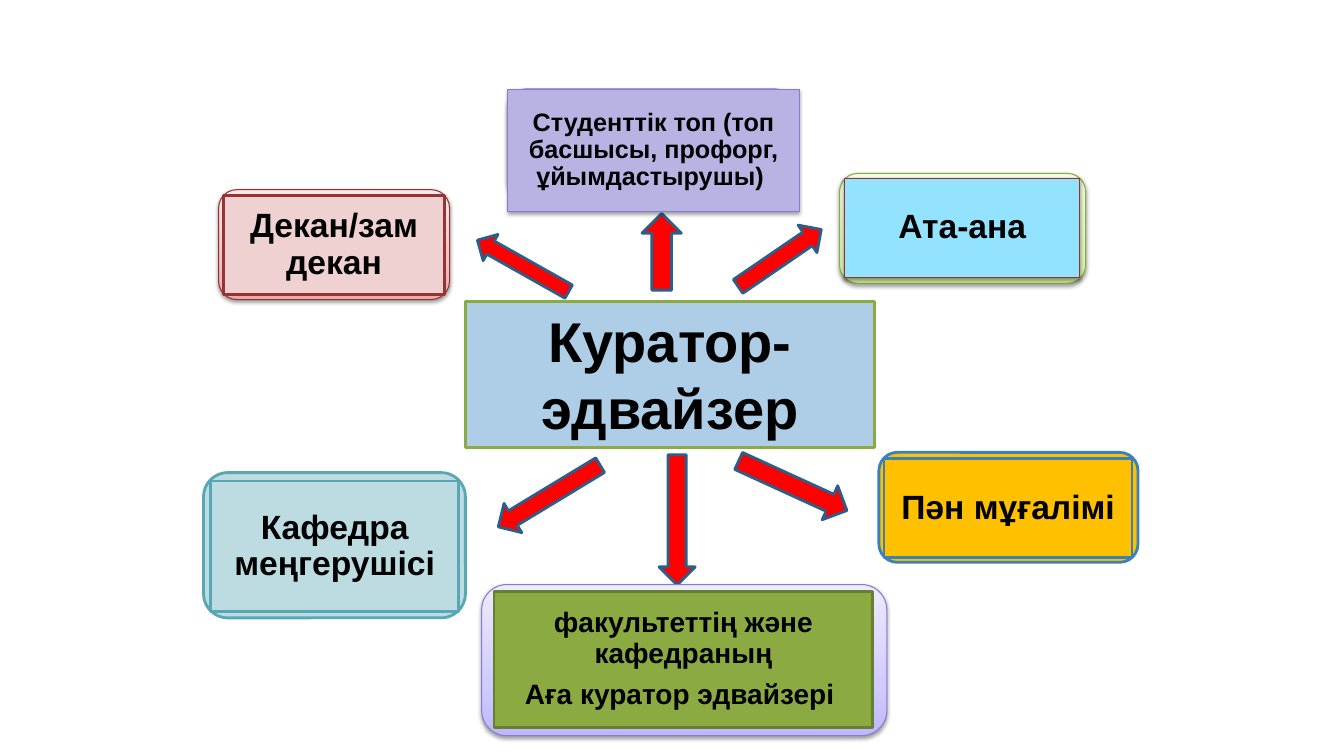
from copy import deepcopy

from pptx import Presentation
from pptx.dml.color import RGBColor
from pptx.enum.shapes import MSO_SHAPE as SHAPE
from pptx.enum.text import MSO_ANCHOR as ANCHOR, MSO_AUTO_SIZE as AUTO, PP_ALIGN as ALIGN
from pptx.oxml import parse_xml
from pptx.oxml.ns import nsdecls
from pptx.util import Cm, Pt

BLACK = RGBColor(0x00, 0x00, 0x00)
RED = RGBColor(0xFF, 0x00, 0x00)
NAVY = RGBColor(0x2B, 0x5F, 0x8A)
SKY = RGBColor(0xAE, 0xCD, 0xE6)
GREEN = RGBColor(0x8B, 0xAB, 0x42)
DARK_GREEN = RGBColor(0x67, 0x7F, 0x31)
LEAF = RGBColor(0x89, 0xAA, 0x3E)
LILAC = RGBColor(0xB9, 0xB3, 0xE4)
VIOLET = RGBColor(0x86, 0x7C, 0xCF)
CYAN = RGBColor(0x93, 0xE3, 0xFF)
MAROON = RGBColor(0x95, 0x2F, 0x30)
BRICK = RGBColor(0x96, 0x33, 0x34)
PINK = RGBColor(0xEF, 0xD1, 0xD1)
AMBER = RGBColor(0xFF, 0xC0, 0x00)
BLUE = RGBColor(0x3A, 0x81, 0xBA)
PALE_TEAL = RGBColor(0xBC, 0xDC, 0xE1)
TEAL = RGBColor(0x57, 0xA7, 0xB5)
# Gradients run from the bottom up
LEAF_FADE = (RGBColor(0xD5, 0xF4, 0xA6), RGBColor(0xE0, 0xF6, 0xC1), RGBColor(0xF3, 0xFD, 0xE7))
VIOLET_FADE = (RGBColor(0xBF, 0xB8, 0xFF), RGBColor(0xD1, 0xCC, 0xFF), RGBColor(0xED, 0xEB, 0xFF))
ROSE_FADE = (RGBColor(0xE8, 0xAA, 0xAA), RGBColor(0xED, 0xC4, 0xC4), RGBColor(0xF9, 0xE8, 0xE8))

FONT = "Arial"
THIN, THICK = 0.75, 2

# Content: boxes are left, top, width, height in cm
ADVISER = ("Куратор-эдвайзер", (11.73, 7.59, 10.31, 3.68))

# text, size, (frame box, fill, line, width), (card box, fill, line, width)
ROLES = [
    ("Студенттік топ (топ басшысы, профорг, ұйымдастырушы) ", 18,
     ((12.8, 2.24, 7.19, 2.77), LILAC, VIOLET, THIN),
     ((12.8, 2.26, 7.34, 3.07), LILAC, VIOLET, THIN)),
    ("Ата-ана", 24,
     ((21.16, 4.37, 6.2, 2.77), LEAF_FADE, LEAF, THIN),
     ((21.29, 4.5, 5.92, 2.49), CYAN, MAROON, THIN)),
    ("Пән мұғалімі", 24,
     ((22.15, 11.4, 6.53, 2.77), AMBER, BLUE, THICK),
     ((22.28, 11.56, 6.25, 2.49), AMBER, BLUE, THICK)),
    ("факультеттің және кафедраның\nАға куратор эдвайзері ", 20,
     ((12.14, 14.73, 10.21, 3.81), VIOLET_FADE, VIOLET, THIN),
     ((12.45, 14.91, 9.55, 3.43), GREEN, DARK_GREEN, THICK)),
    ("Кафедра меңгерушісі", 24,
     ((5.13, 11.91, 6.6, 3.66), PALE_TEAL, TEAL, THICK),
     ((5.31, 12.12, 6.25, 3.3), PALE_TEAL, TEAL, THICK)),
    ("Декан/зам декан", 24,
     ((5.51, 4.78, 5.82, 2.77), ROSE_FADE, MAROON, THIN),
     ((5.64, 4.93, 5.56, 2.49), PINK, BRICK, THICK)),
]

# box before turning, clockwise turn from pointing down
ARROWS = [
    ((16.18, 5.38, 0.99, 1.93), 180),
    ((16.61, 11.46, 0.91, 3.28), 0),
    ((19.23, 5.23, 0.84, 2.54), 235.6),
    ((19.51, 10.74, 0.94, 3.0), 294.6),
    ((13.41, 11.0, 0.86, 3.0), 58.8),
    ((12.8, 5.38, 0.76, 2.64), 119.4),
]


def fade(fill, colors):
    fill.gradient()
    fill.gradient_angle = 90
    first = fill.gradient_stops[0]._gs
    first.addnext(deepcopy(first))
    for stop, position, color in zip(fill.gradient_stops, (0, 0.35, 1), colors):
        stop.position = position
        stop.color.rgb = color


def drop_shadow(sp):
    sp._element.spPr.find("{*}effectLst").append(parse_xml(
        f'<a:outerShdw {nsdecls("a")} blurRad="{Pt(3.1)}" dist="{Pt(1.6)}" dir="5400000" '
        'rotWithShape="0"><a:srgbClr val="000000"><a:alpha val="38000"/></a:srgbClr>'
        '</a:outerShdw>'))


def add_block(s, kind, box, fill, line, width):
    sp = s.shapes.add_shape(kind, *(Cm(v) for v in box))
    if isinstance(fill, RGBColor):
        sp.fill.solid()
        sp.fill.fore_color.rgb = fill
    else:
        fade(sp.fill, fill)
    sp.line.color.rgb = line
    sp.line.width = Pt(width)
    sp.shadow.inherit = False
    if width == THIN:
        drop_shadow(sp)
    return sp


def write(sp, text, size):
    tf = sp.text_frame
    tf.text = text
    tf.word_wrap = True
    for p in tf.paragraphs:
        p.alignment = ALIGN.CENTER
        for r in p.runs:
            r.font.name, r.font.size, r.font.bold = FONT, Pt(size), True
            r.font.color.rgb = BLACK
    return tf


prs = Presentation()
prs.slide_width, prs.slide_height = Cm(33.87), Cm(19.05)
s = prs.slides.add_slide(prs.slide_layouts[6])

# Adviser in the centre
text, box = ADVISER
tf = write(add_block(s, SHAPE.RECTANGLE, box, SKY, GREEN, THICK), text, 40)
tf.vertical_anchor = ANCHOR.TOP
tf.auto_size = AUTO.SHAPE_TO_FIT_TEXT

# Arrows
for box, turn in ARROWS:
    add_block(s, SHAPE.DOWN_ARROW, box, RED, NAVY, THICK).rotation = turn

# Roles around the adviser
for text, size, frame, card in ROLES:
    add_block(s, SHAPE.ROUNDED_RECTANGLE, *frame)
    tf = write(add_block(s, SHAPE.RECTANGLE, *card), text, size)
    tf.vertical_anchor = ANCHOR.MIDDLE
    tf.margin_left = tf.margin_right = tf.margin_top = tf.margin_bottom = Cm(0.25)
    for p in tf.paragraphs:
        p.line_spacing = 0.9
    for p in tf.paragraphs[:-1]:
        p.space_after = Pt(8)

prs.save("out.pptx")
